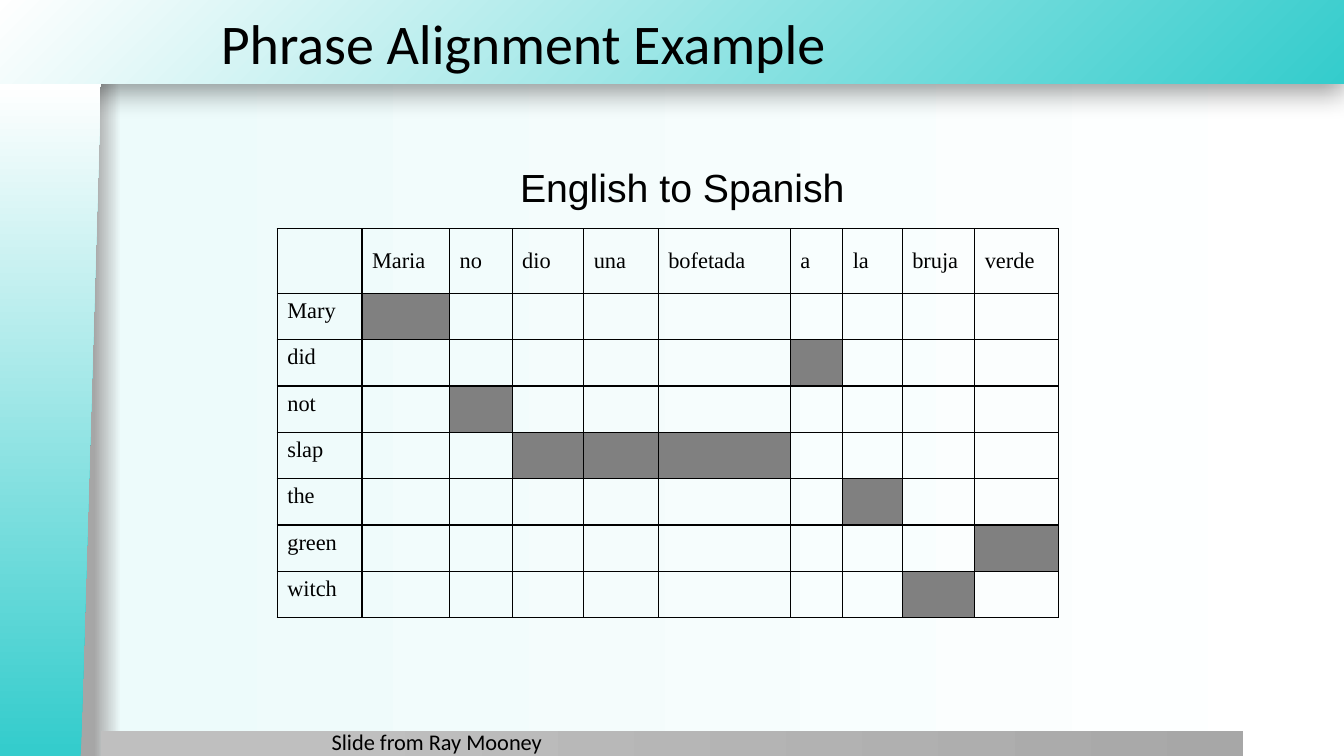
from dataclasses import dataclass
from typing import Optional

from lxml import etree
from pptx import Presentation
from pptx.dml.color import RGBColor
from pptx.enum.shapes import MSO_SHAPE
from pptx.enum.text import MSO_ANCHOR, MSO_AUTO_SIZE, PP_ALIGN
from pptx.oxml import parse_xml
from pptx.oxml.ns import nsdecls, qn
from pptx.util import Emu, Pt

EMU_PER_PX = 9144  # 100 px to the inch
RECTANGLE = MSO_SHAPE.RECTANGLE
SLANTED = MSO_SHAPE.FLOWCHART_MANUAL_INPUT
MIDDLE, TOP = MSO_ANCHOR.MIDDLE, MSO_ANCHOR.TOP
LEFT = PP_ALIGN.LEFT
GROW, FIXED = MSO_AUTO_SIZE.SHAPE_TO_FIT_TEXT, MSO_AUTO_SIZE.NONE

BLACK = RGBColor(0x00, 0x00, 0x00)
WHITE = RGBColor(0xFF, 0xFF, 0xFF)
TEAL = RGBColor(0x34, 0xCC, 0xCC)
PALE_TEAL = RGBColor(0xED, 0xFB, 0xFB)
EDGE_GRAY = RGBColor(0xA6, 0xA6, 0xA6)
FOOTER_LIGHT = RGBColor(0xBF, 0xBF, 0xBF)
FOOTER_DARK = RGBColor(0xA7, 0xA7, 0xA7)
ALIGNED_GRAY = RGBColor(0x80, 0x80, 0x80)

Stops = tuple[tuple[int, RGBColor], ...]
Box = tuple[int, int, int, int]

LINEAR = '<a:lin {} ang="0" scaled="0"/>'
FROM_BOTTOM_RIGHT = ('<a:path {} path="circle">'
                     '<a:fillToRect l="100000" t="100000"/></a:path>')
BACKGROUND_STOPS: Stops = ((7, EDGE_GRAY), (9, PALE_TEAL), (100, WHITE))


@dataclass(frozen=True)
class Band:
    box: Box
    stops: Stops
    preset: MSO_SHAPE = RECTANGLE
    direction: str = LINEAR
    rotation: int = 0
    flipped: bool = False
    shadowed: bool = False


@dataclass(frozen=True)
class Label:
    text: str
    box: Box
    font: str
    size: int
    wrap: bool = True


@dataclass(frozen=True)
class AlignedRow:
    english: str
    spanish: tuple[str, ...]


BANDS = (
    Band((-1, 0, 1334, 83), ((0, TEAL), (100, WHITE)),
         direction=FROM_BOTTOM_RIGHT, shadowed=True),
    Band((100, 725, 1133, 26), ((20, FOOTER_LIGHT), (100, FOOTER_DARK))),
    Band((-284, 367, 668, 100), ((1, TEAL), (100, WHITE)),
         preset=SLANTED, rotation=270, flipped=True),
)
LABELS = (
    Label("English to Spanish", (506, 157, 346, 57), "Arial", 28, wrap=False),
    Label("Slide from Ray Mooney", (319, 717, 275, 33), "Calibri", 16),
)
SPANISH = ("Maria", "no", "dio", "una", "bofetada", "a", "la", "bruja", "verde")
ALIGNMENT = (
    AlignedRow("Mary", ("Maria",)),
    AlignedRow("did", ("a",)),
    AlignedRow("not", ("no",)),
    AlignedRow("slap", ("dio", "una", "bofetada")),
    AlignedRow("the", ("la",)),
    AlignedRow("green", ("verde",)),
    AlignedRow("witch", ("bruja",)),
)
TABLE_LEFT, TABLE_TOP = 275, 227
COLUMN_WIDTHS = (84, 87, 62, 71, 74, 131, 52, 59, 72, 83)
HEADER_HEIGHT, ROW_HEIGHT = 64, 46


def px(length: int) -> Emu:
    return Emu(length * EMU_PER_PX)


def set_gradient(owner, stops: Stops, direction: str = LINEAR) -> None:
    """Replace the stops and direction of the gradient fill inside owner."""
    gradient = owner.find(".//" + qn("a:gradFill"))
    gradient.set("rotWithShape", "1")
    for child in list(gradient):
        gradient.remove(child)
    stop_list = etree.SubElement(gradient, qn("a:gsLst"))
    for percent, color in stops:
        stop = etree.SubElement(stop_list, qn("a:gs"), pos=str(percent * 1000))
        etree.SubElement(stop, qn("a:srgbClr"), val=str(color))
    gradient.append(parse_xml(direction.format(nsdecls("a"))))


def add_band(slide, band: Band):
    shape = slide.shapes.add_shape(band.preset, *map(px, band.box))
    shape.rotation = band.rotation
    shape.shadow.inherit = False
    shape.line.fill.background()
    shape.fill.gradient()
    set_gradient(shape.element, band.stops, band.direction)
    properties = shape.element.spPr
    if band.flipped:
        properties.find(qn("a:xfrm")).set("flipV", "1")
    if band.shadowed:
        shadow = etree.SubElement(
            properties.find(qn("a:effectLst")), qn("a:outerShdw"),
            blurRad=str(Pt(20)), dist=str(Pt(6)), dir="5400000",
            algn="t", rotWithShape="0")
        color = etree.SubElement(shadow, qn("a:srgbClr"), val=str(BLACK))
        etree.SubElement(color, qn("a:alpha"), val="40000")
    return shape


def write(frame, text: str, font: str, size: int) -> None:
    frame.text = text
    paragraph = frame.paragraphs[0]
    paragraph.alignment = LEFT
    paragraph.font.name = font
    paragraph.font.size = Pt(size)
    paragraph.font.color.rgb = BLACK


def place_title(slide, below) -> None:
    """Fill the title placeholder and raise it just above the given shape."""
    title = slide.shapes.title
    title.left, title.top, title.width, title.height = map(px, (209, 0, 1125, 83))
    title.text_frame.vertical_anchor = MIDDLE
    title.text_frame.auto_size = FIXED
    write(title.text_frame, "Phrase Alignment Example", "Calibri", 40)
    below.element.addnext(title.element)


def add_label(slide, label: Label) -> None:
    frame = slide.shapes.add_textbox(*map(px, label.box)).text_frame
    frame.word_wrap = label.wrap
    frame.auto_size = FIXED if label.wrap else GROW
    write(frame, label.text, label.font, label.size)


def format_cell(cell, text: str, anchor: MSO_ANCHOR,
                fill: Optional[RGBColor] = None) -> None:
    properties = cell._tc.get_or_add_tcPr()
    for side in ("lnL", "lnR", "lnT", "lnB"):
        border = etree.SubElement(properties, qn(f"a:{side}"), w=str(Pt(1)))
        solid = etree.SubElement(border, qn("a:solidFill"))
        etree.SubElement(solid, qn("a:srgbClr"), val=str(BLACK))
    if fill is None:
        cell.fill.background()
    else:
        cell.fill.solid()
        cell.fill.fore_color.rgb = fill
    cell.vertical_anchor = anchor
    if text:
        write(cell.text_frame, text, "Times New Roman", 16)


def add_alignment_table(slide) -> None:
    heights = (HEADER_HEIGHT,) + (ROW_HEIGHT,) * len(ALIGNMENT)
    table = slide.shapes.add_table(
        len(heights), len(COLUMN_WIDTHS), px(TABLE_LEFT), px(TABLE_TOP),
        px(sum(COLUMN_WIDTHS)), px(sum(heights))).table
    table.first_row = table.horz_banding = False
    for column, width in zip(table.columns, COLUMN_WIDTHS):
        column.width = px(width)
    for row, height in zip(table.rows, heights):
        row.height = px(height)
    for column, word in enumerate(("",) + SPANISH):
        format_cell(table.cell(0, column), word, MIDDLE)
    for row, aligned in enumerate(ALIGNMENT, start=1):
        format_cell(table.cell(row, 0), aligned.english, TOP)
        for column, word in enumerate(SPANISH, start=1):
            fill = ALIGNED_GRAY if word in aligned.spanish else None
            format_cell(table.cell(row, column), "", TOP, fill)


def main() -> None:
    presentation = Presentation()
    presentation.slide_width, presentation.slide_height = px(1333), px(750)
    title_only = presentation.slide_layouts.get_by_name("Title Only")
    slide = presentation.slides.add_slide(title_only)
    slide.background.fill.gradient()
    set_gradient(slide.element, BACKGROUND_STOPS)
    bands = [add_band(slide, band) for band in BANDS]
    place_title(slide, below=bands[-1])
    add_alignment_table(slide)
    for label in LABELS:
        add_label(slide, label)
    presentation.save("out.pptx")


if __name__ == "__main__":
    main()
